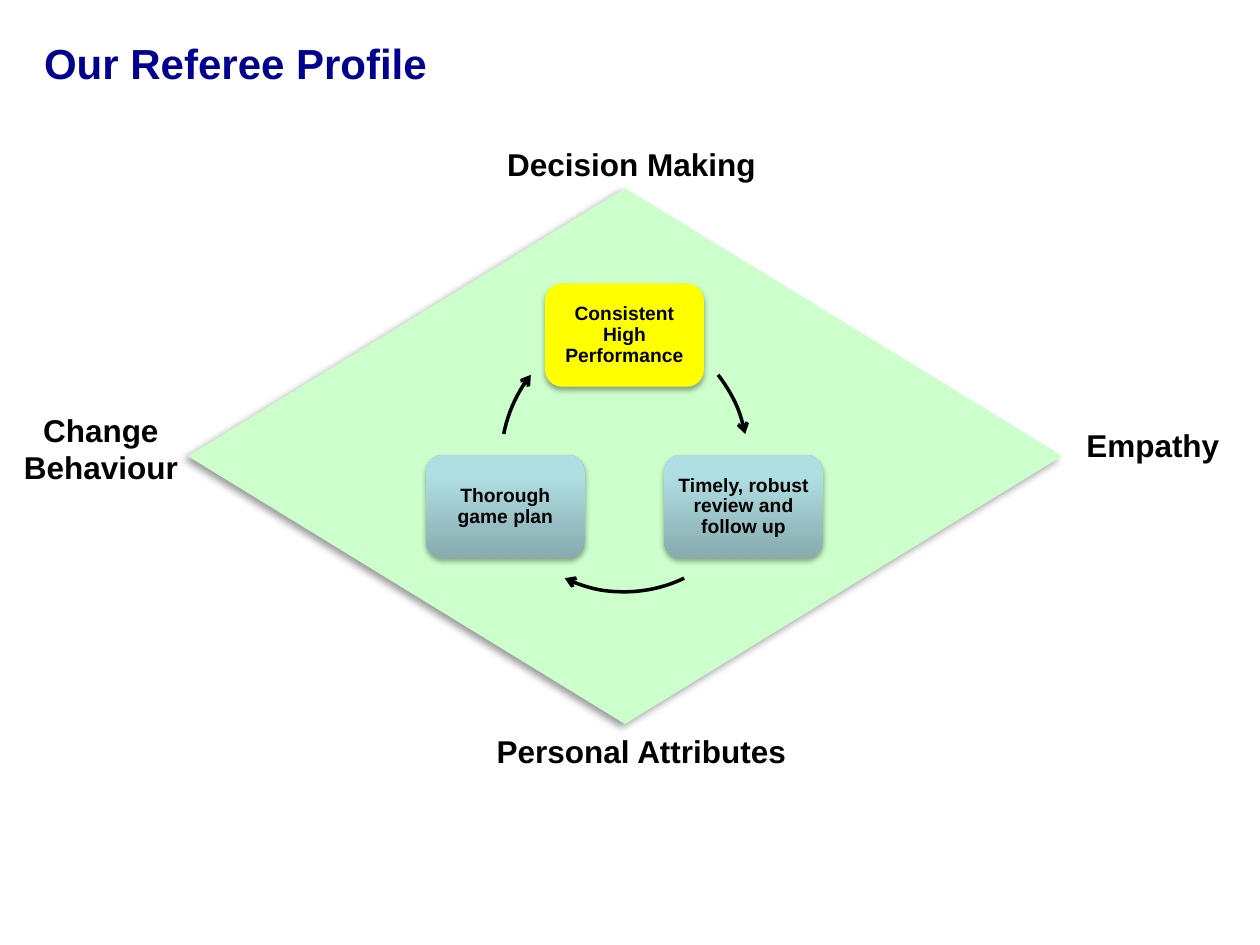
from copy import deepcopy

from lxml.etree import SubElement
from pptx import Presentation
from pptx.dml.color import RGBColor
from pptx.enum.shapes import MSO_SHAPE as SHAPE
from pptx.enum.text import MSO_ANCHOR as ANCHOR, MSO_AUTO_SIZE as AUTO, PP_ALIGN as ALIGN
from pptx.oxml.ns import qn
from pptx.util import Pt

COLORS = {"title": "000090", "text": "000000", "diamond": "CCFFCC", "goal": "FFFF00",
          "card_dark": "87ABAE", "card_mid": "AFDEE2", "card_light": "AFE0E4"}


def rgb(name):
    """Look up a named colour."""
    return RGBColor.from_string(COLORS[name])


def style(p, size, color="text", align=ALIGN.CENTER):
    """Format a paragraph in bold Arial."""
    p.alignment = align
    p.font.name, p.font.size, p.font.bold = "Arial", Pt(size), True
    p.font.color.rgb = rgb(color)


def add_shadow(sp, alpha, blur, dist, angle):
    """Give a shape an outer shadow, in percent, points and degrees."""
    sp.shadow.inherit = False
    effects = sp._element.spPr.find(qn("a:effectLst"))
    shadow = SubElement(effects, qn("a:outerShdw"), blurRad=str(Pt(blur)), dist=str(Pt(dist)),
                        dir=str(angle * 60000), algn="ctr", rotWithShape="0")
    color = SubElement(shadow, qn("a:srgbClr"), val=COLORS["text"])
    SubElement(color, qn("a:alpha"), val=str(alpha * 1000))


def fill_gradient(sp):
    """Fill a shape with the card gradient, dark at the bottom."""
    sp.fill.gradient()
    sp.fill.gradient_angle = 90
    stops = sp._element.spPr.find(".//" + qn("a:gsLst"))
    stops.append(deepcopy(stops[-1]))
    names = ("card_dark", "card_mid", "card_light")
    for stop, name, position in zip(sp.fill.gradient_stops, names, (0, 0.8, 1)):
        stop.color.rgb = rgb(name)
        stop.position = position


def add_title(slide, text, x, y, w, h):
    """Place the slide title in its box."""
    sp = slide.shapes.title
    sp.left, sp.top, sp.width, sp.height = Pt(x), Pt(y), Pt(w), Pt(h)
    tf = sp.text_frame
    tf.text = text
    tf.word_wrap, tf.auto_size, tf.vertical_anchor = False, AUTO.NONE, ANCHOR.TOP
    style(tf.paragraphs[0], 24, "title", ALIGN.LEFT)


def add_label(slide, text, x, y, w, h):
    """Place a label beside a corner of the diamond."""
    tf = slide.shapes.add_textbox(Pt(x), Pt(y), Pt(w), Pt(h)).text_frame
    tf.text = text
    tf.word_wrap, tf.auto_size = False, AUTO.SHAPE_TO_FIT_TEXT
    for p in tf.paragraphs:
        style(p, 18)


def add_diamond(slide, x, y, w, h):
    """Draw the large diamond."""
    sp = slide.shapes.add_shape(SHAPE.DIAMOND, Pt(x), Pt(y), Pt(w), Pt(h))
    sp.fill.solid()
    sp.fill.fore_color.rgb = sp.line.color.rgb = rgb("diamond")
    sp.line.width = Pt(0.75)
    add_shadow(sp, 40, 4, 3, 135)


def add_card(slide, text, x, y, w, h, goal=False):
    """Draw one step of the cycle."""
    sp = slide.shapes.add_shape(SHAPE.ROUNDED_RECTANGLE, Pt(x), Pt(y), Pt(w), Pt(h))
    if goal:
        sp.fill.solid()
        sp.fill.fore_color.rgb = rgb("goal")
    else:
        fill_gradient(sp)
    sp.line.fill.background()
    add_shadow(sp, 35, 3.1, 1.8, 90)
    tf = sp.text_frame
    tf.text = text
    tf.word_wrap, tf.vertical_anchor = True, ANCHOR.MIDDLE
    tf.margin_left = tf.margin_right = tf.margin_top = tf.margin_bottom = Pt(3.6)
    p = tf.paragraphs[0]
    p.line_spacing = 0.9
    style(p, 11)


def add_arc(slide, x, y, size, start, end):
    """Draw a clockwise arc arrow between two angles in degrees."""
    sp = slide.shapes.add_shape(SHAPE.ARC, Pt(x), Pt(y), Pt(size), Pt(size))
    sp.adjustments[0], sp.adjustments[1] = start * 0.6, end * 0.6
    sp.shadow.inherit = False
    sp.fill.background()
    sp.line.color.rgb = rgb("text")
    sp.line.width = Pt(2)
    SubElement(sp.line._get_or_add_ln(), qn("a:tailEnd"), type="arrow")


def add_cycle(slide, x, y, w, h):
    """Draw three cards and the arrows between them."""
    card_w, card_h, arc = 90.8, 59, 157.5
    mid, low = x + (w - card_w) / 2, y + h - card_h
    arc_x = x + (w - arc) / 2
    add_card(slide, "Consistent High Performance", mid, y, card_w, card_h, goal=True)
    add_card(slide, "Timely, robust review and follow up", x + w - card_w, low, card_w, card_h)
    add_card(slide, "Thorough game plan", x, low, card_w, card_h)
    add_arc(slide, arc_x - 8.3, y + 22.3, arc, 321.7, 349)
    add_arc(slide, arc_x, y + 18.7, arc, 64.3, 115.7)
    add_arc(slide, arc_x + 8.3, y + 22.3, arc, 191, 218.3)


def main():
    """Build and save the slide."""
    prs = Presentation()
    prs.slide_width, prs.slide_height = Pt(720), Pt(540)
    slide = prs.slides.add_slide(prs.slide_layouts[5])
    add_title(slide, "Our Referee Profile", 18, 18, 245, 65.5)
    add_diamond(slide, 108, 108, 498.2, 305.3)
    add_cycle(slide, 243.4, 162, 226.9, 157)
    add_label(slide, "Decision Making", 282, 79.2, 157.7, 29)
    add_label(slide, "Personal Attributes", 275.8, 414.7, 181.4, 29)
    add_label(slide, "Change\nBehaviour", 5.8, 231.1, 103.7, 51)
    add_label(slide, "Empathy", 612, 239.8, 93.6, 29)
    prs.save("out.pptx")


if __name__ == "__main__":
    main()
